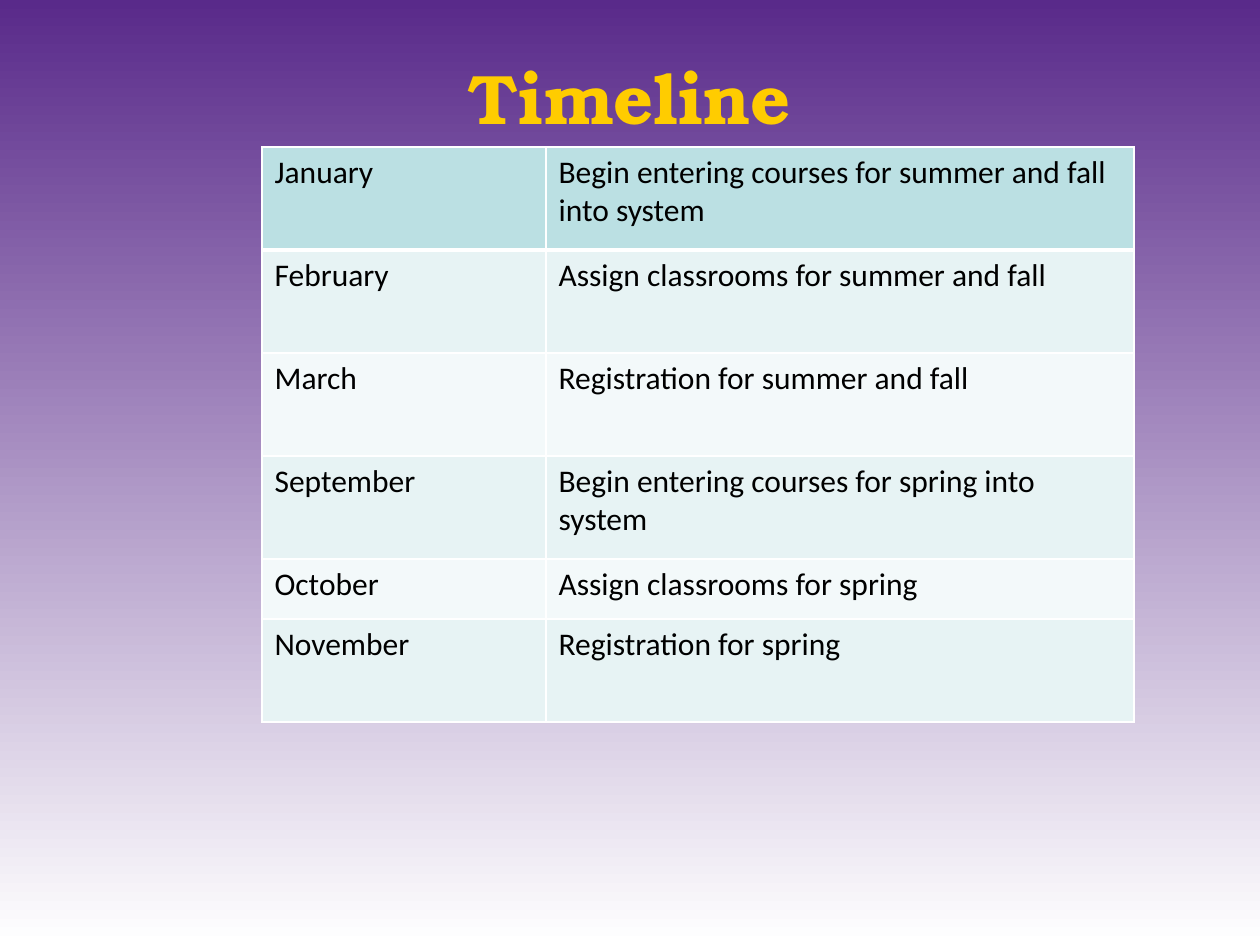
from lxml.etree import SubElement as Sub
from pptx import Presentation
from pptx.dml.color import RGBColor as Rgb
from pptx.enum.text import MSO_ANCHOR as Anchor, PP_ALIGN as Align
from pptx.oxml.ns import qn
from pptx.util import Pt

HUES = {
    "purple": "592A8A", "white": "FFFFFF", "gold": "FFCC00", "black": "000000",
    "head": "BBE0E3", "odd": "E7F3F4", "even": "F3F9FA",
}
TITLE = {"name": "TeX Gyre Bonum", "size": Pt(40), "bold": True}
BODY = {"name": "Calibri", "size": Pt(18), "bold": False}
DATES = [
    ("January", "Begin entering courses for summer and fall into system"),
    ("February", "Assign classrooms for summer and fall"),
    ("March", "Registration for summer and fall"),
    ("September", "Begin entering courses for spring into system"),
    ("October", "Assign classrooms for spring"),
    ("November", "Registration for spring"),
]
WIDTHS = [284, 588]
TALL, SHORT = 103, 60
HEIGHTS = [SHORT if month == "October" else TALL for month, _ in DATES]


def px(num):
    return round(num * 914400 / 126)


def hue(name):
    return Rgb.from_string(HUES[name])


def style(font, look, tint):
    for key, val in look.items():
        setattr(font, key, val)
    font.color.rgb = hue(tint)


def paint_back(slide):
    """Fade the background from purple at the top to white."""
    fill = slide.background.fill
    fill.gradient()
    fill.gradient_angle = 270
    for stop, name, pos in zip(fill.gradient_stops, ("purple", "white"), (0, 1)):
        stop.color.rgb = hue(name)
        stop.position = pos


def add_title(slide, text):
    box = slide.shapes.title
    box.left, box.top, box.width, box.height = map(px, (63, 18, 1134, 157))
    frame = box.text_frame
    frame.text = text
    frame.vertical_anchor = Anchor.MIDDLE
    para = frame.paragraphs[0]
    para.alignment = Align.CENTER
    style(para.runs[0].font, TITLE, "gold")


def add_edges(cell, top, bottom):
    """Draw white cell borders; top and bottom are widths in points."""
    props = cell._tc.get_or_add_tcPr()
    for side, width in {"L": 1, "R": 1, "T": top, "B": bottom}.items():
        line = Sub(props, qn(f"a:ln{side}"), w=str(Pt(width)))
        Sub(Sub(line, qn("a:solidFill")), qn("a:srgbClr"), val=HUES["white"])


def fill_cell(cell, text, row):
    add_edges(cell, 3 if row == 1 else 1, 3 if row == 0 else 1)
    band = "head" if row == 0 else "odd" if row % 2 else "even"
    cell.fill.solid()
    cell.fill.fore_color.rgb = hue(band)
    cell.text = text
    style(cell.text_frame.paragraphs[0].runs[0].font, BODY, "black")


def add_dates(slide):
    size = (262, 147, sum(WIDTHS), sum(HEIGHTS))
    grid = slide.shapes.add_table(len(DATES), len(WIDTHS), *map(px, size)).table
    for col, width in zip(grid.columns, WIDTHS):
        col.width = px(width)
    for row, height in zip(grid.rows, HEIGHTS):
        row.height = px(height)
    for row, texts in enumerate(DATES):
        for col, text in enumerate(texts):
            fill_cell(grid.cell(row, col), text, row)


def main():
    deck = Presentation()
    deck.slide_width, deck.slide_height = px(1260), px(945)
    slide = deck.slides.add_slide(deck.slide_layouts[5])
    paint_back(slide)
    add_title(slide, "Timeline")
    add_dates(slide)
    deck.save("out.pptx")


if __name__ == "__main__":
    main()
